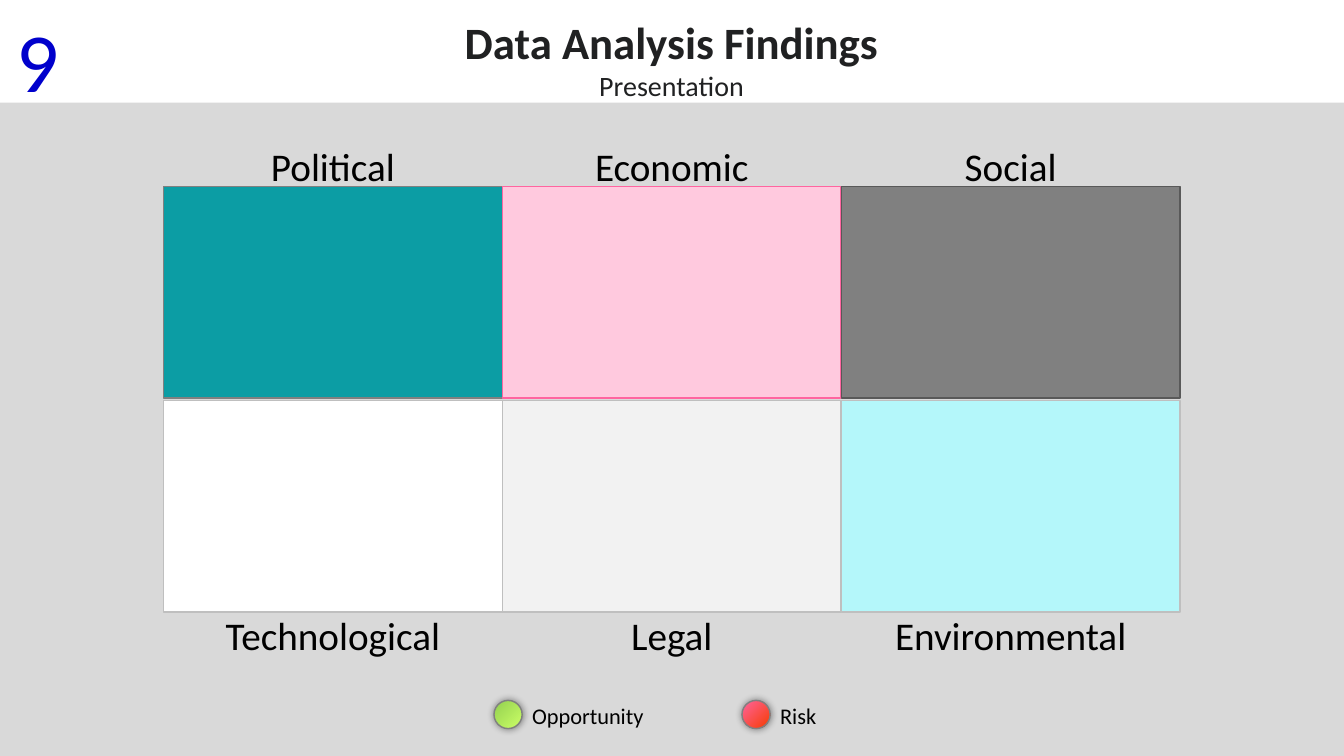
from lxml import etree
from pptx import Presentation
from pptx import util as u
from pptx.dml.color import RGBColor
from pptx.enum import shapes, text
from pptx.oxml import parse_xml
from pptx.oxml.ns import nsdecls, qn

COLORS = {
    "title": "202122", "number": "0000CC", "text": "000000",
    "backdrop": "D9D9D9", "teal": "0C9DA4", "pink": "FFC9DE",
    "rose": "FF65A0", "gray": "808080", "dark": "595959",
    "white": "FFFFFF", "silver": "BFBFBF", "pale": "F2F2F2",
    "aqua": "B4F7FA", "lime": "CCFF66", "green": "92D050", "red": "F63B00",
}
FACTORS = [
    [("Political", 3.66, "teal", "gray"),
     ("Economic", 4.42, "pink", "rose"),
     ("Social", 2.84, "gray", "dark")],
    [("Technological", 5.97, "white", "silver"),
     ("Legal", 2.59, "pale", "silver"),
     ("Environmental", 6.4, "aqua", "silver")],
]
LEGEND = [("Opportunity", 0, 5.08, "lime", "green"),
          ("Risk", 6.25, 2.01, "red", "rose")]


def rgb(name):
    return RGBColor.from_string(COLORS[name])


def add_text(s, box, runs, align=text.PP_ALIGN.CENTER,
             anchor=text.MSO_ANCHOR.MIDDLE, wrap=False):
    tf = s.shapes.add_textbox(*map(u.Cm, box)).text_frame
    tf.word_wrap = wrap
    tf.auto_size = text.MSO_AUTO_SIZE.SHAPE_TO_FIT_TEXT
    tf.vertical_anchor = anchor
    for i, (words, size, color, bold) in enumerate(runs):
        p = tf.add_paragraph() if i else tf.paragraphs[0]
        p.alignment = align
        r = p.add_run()
        r.text = words
        r.font.name = "Calibri"
        r.font.size = u.Pt(size)
        r.font.bold = bold
        r.font.color.rgb = rgb(color)


def add_panel(s, kind, box, fill, line=None):
    sp = s.shapes.add_shape(kind, *map(u.Cm, box))
    sp.shadow.inherit = False
    sp.fill.solid()
    sp.fill.fore_color.rgb = rgb(fill)
    if line:
        sp.line.color.rgb = rgb(line)
        sp.line.width = u.Pt(1)
    else:
        sp.line.fill.background()
    return sp


def add_header(s, x, y, w, h):
    add_text(s, (x + 1.14, y + 0.25, w - 2.3, h - 0.1),
             [("Data Analysis Findings", 32, "title", True),
              ("Presentation", 20, "title", False)],
             anchor=text.MSO_ANCHOR.TOP, wrap=True)
    add_text(s, (x + 0.15, y + 0.08, 1.6, 2.82),
             [("9", 60, "number", False)], anchor=text.MSO_ANCHOR.TOP)


def add_grid(s, x, y, w, h):
    cell_w, cell_h, gap, label_h = w / 3, 5.33, 0.06, 1.45
    label_tops = (y - 1.25, y + h - 0.15)
    for row, factors in enumerate(FACTORS):
        for col, (name, label_w, fill, line) in enumerate(factors):
            left = x + col * cell_w
            add_text(s, (left + (cell_w - label_w) / 2, label_tops[row],
                         label_w, label_h), [(name, 28, "text", False)])
            add_panel(s, shapes.MSO_SHAPE.RECTANGLE,
                      (left, y + row * (cell_h + gap), cell_w, cell_h),
                      fill, line)


def style_dot(sp, inner, outer):
    pr = sp.fill._xPr
    solid = pr.find(qn("a:solidFill"))
    pr.replace(solid, parse_xml(
        f'<a:gradFill {nsdecls("a")} rotWithShape="1"><a:gsLst>'
        f'<a:gs pos="0"><a:srgbClr val="{COLORS[inner]}"/></a:gs>'
        f'<a:gs pos="100000"><a:srgbClr val="{COLORS[outer]}"/></a:gs>'
        '</a:gsLst><a:path path="circle">'
        '<a:fillToRect l="100000" t="100000"/></a:path></a:gradFill>'))
    shadow = etree.SubElement(pr.find(qn("a:effectLst")), qn("a:outerShdw"),
                              blurRad="63500", sx="102000", sy="102000",
                              algn="ctr", rotWithShape="0")
    black = etree.SubElement(shadow, qn("a:prstClr"), val="black")
    etree.SubElement(black, qn("a:alpha"), val="40000")


def add_legend(s, x, y, dot):
    for name, offset, label_w, inner, outer in LEGEND:
        sp = add_panel(s, shapes.MSO_SHAPE.OVAL,
                       (x + offset, y, dot, dot), inner, "gray")
        style_dot(sp, inner, outer)
        add_text(s, (x + offset + dot, y - 0.1, label_w, 0.94),
                 [(name, 16, "text", False)],
                 align=text.PP_ALIGN.LEFT, wrap=True)


def main():
    prs = Presentation()
    prs.slide_width, prs.slide_height = u.Cm(33.87), u.Cm(19.05)
    s = prs.slides.add_slide(prs.slide_layouts[6])
    add_header(s, 0, 0, 33.87, 2.59)
    add_panel(s, shapes.MSO_SHAPE.RECTANGLE, (0, 2.59, 33.87, 16.46), "backdrop")
    add_grid(s, 4.12, 4.7, 25.62, 10.72)
    add_legend(s, 12.45, 17.65, 0.71)
    prs.save("out.pptx")


if __name__ == "__main__":
    main()
